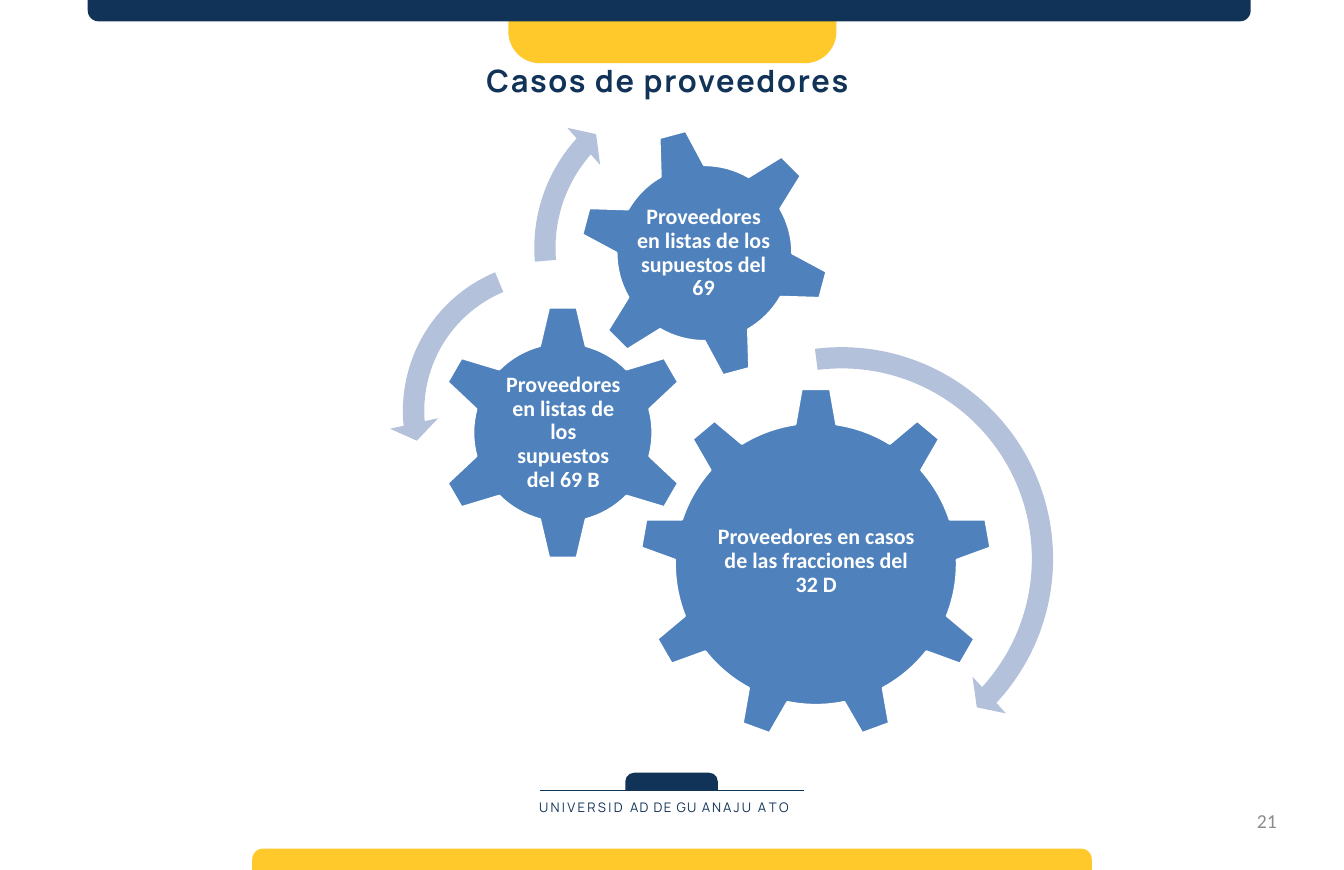
"""Build the supplier cases slide with three gears and turning arrows."""
import pptx
import pptx.dml.color
import pptx.enum.shapes
import pptx.enum.text
import pptx.oxml.ns
import pptx.util
from lxml import etree
from pptx.util import Inches

NAVY, YELLOW, BLUE, PALE = "123358", "FFC82B", "4F81BD", "B3C1DB"
WHITE, GRAY = "FFFFFF", "8C8C8C"
SHAPE = pptx.enum.shapes.MSO_SHAPE
ALIGN = pptx.enum.text.PP_ALIGN
ANCHOR = pptx.enum.text.MSO_ANCHOR

TABS = [
    (7.91, 9.77, 1.17, 0.22, NAVY, True),
    (6.43, 0, 4.15, 0.8, YELLOW, False),
    (1.11, 0, 14.71, 0.27, NAVY, False),
    (3.19, 10.73, 10.62, 0.27, YELLOW, True),
]
GEARS = [
    (SHAPE.GEAR_9, 8.09, 4.9, 4.46, 0, (8.99, 5.95, 2.67, 2.29),
     "Proveedores en casos de las fracciones del 32 D"),
    (SHAPE.GEAR_6, 5.5, 3.85, 3.24, 0, (6.32, 4.67, 1.61, 1.6),
     "Proveedores en listas de los supuestos del 69 B"),
    (SHAPE.GEAR_6, 7.32, 1.61, 3.18, 345, (8.01, 2.31, 1.78, 1.78),
     "Proveedores en listas de los supuestos del 69"),
]
ARROWS = [
    (SHAPE.CIRCULAR_ARROW, 7.79, 4.21, 5.71, (0.047, 2.99, 25.618, 157.662, 0.055)),
    (SHAPE.LEFT_CIRCULAR_ARROW, 4.92, 3.12, 4.15, (0.065, 4.3, 104.891, 148.378, 0.075)),
    (SHAPE.CIRCULAR_ARROW, 6.58, 0.9, 4.47, (0.06, 3.941, 133.138, 105.082, 0.07)),
]
UNIVERSITY = [("UNIVERSID ", 2.1), ("AD DE GU ", 1.2), ("ANAJU ", 1.9),
              ("A T ", 0), ("O", -0.5)]


def rgb(color):
    """Return the colour for a hex string."""
    return pptx.dml.color.RGBColor.from_string(color)


def format_run(r, size, font, color, bold=False, spacing=0):
    """Set the font and letter spacing of a run."""
    r.font.size = pptx.util.Pt(size)
    r.font.name = font
    r.font.bold = bold
    r.font.color.rgb = rgb(color)
    if spacing:
        r._r.get_or_add_rPr().set("spc", str(round(spacing * 100)))


def format_frame(tf, anchor=ANCHOR.TOP, inset=0):
    """Set wrapping, anchor and equal insets of a text frame."""
    tf.word_wrap = True
    tf.auto_size = pptx.enum.text.MSO_AUTO_SIZE.NONE
    tf.vertical_anchor = anchor
    tf.margin_left = tf.margin_right = Inches(inset)
    tf.margin_top = tf.margin_bottom = Inches(inset)


def add_text(s, box, align, anchor=ANCHOR.TOP, inset=0):
    """Add a text box and return its first paragraph."""
    tf = s.shapes.add_textbox(*map(Inches, box)).text_frame
    format_frame(tf, anchor, inset)
    tf.paragraphs[0].alignment = align
    return tf.paragraphs[0]


def add_shape(s, kind, box, fill, adjustments=()):
    """Add a flat shape without outline."""
    sp = s.shapes.add_shape(kind, *map(Inches, box))
    sp.shadow.inherit = False
    sp.fill.solid()
    sp.fill.fore_color.rgb = rgb(fill)
    sp.line.fill.background()
    for i, value in enumerate(adjustments):
        sp.adjustments[i] = value
    return sp


def add_tab(s, x, y, w, h, color, round_top):
    """Add an edge tab rounded at its top or its bottom."""
    radii = (0.5, 0) if round_top else (0, 0.5)
    add_shape(s, SHAPE.ROUND_2_SAME_RECTANGLE, (x, y, w, h), color, radii)


def add_gear(s, kind, x, y, size, rotation, label_box, label):
    """Add a gear and its upright label."""
    sp = add_shape(s, kind, (x, y, size, size), BLUE)
    sp.rotation = rotation
    sp.line.color.rgb = rgb(WHITE)
    sp.line.width = pptx.util.Pt(2)
    p = add_text(s, label_box, ALIGN.CENTER, ANCHOR.MIDDLE, 0.03)
    p.line_spacing = 0.9
    p.text = label
    format_run(p.runs[0], 20, "Calibri", WHITE, bold=True)


def add_title(s, text):
    """Fill and place the title placeholder."""
    sp = s.shapes.title
    sp.left, sp.top, sp.width, sp.height = map(Inches, (3.11, 0.78, 10.67, 0.49))
    tf = sp.text_frame
    tf.text = text
    format_frame(tf)
    p = tf.paragraphs[0]
    p.alignment = ALIGN.CENTER
    format_run(p.runs[0], 28, "Manrope", NAVY, bold=True, spacing=1.6)


def add_rule(s, x1, x2, y):
    """Add the thin horizontal line above the university name."""
    line = s.shapes.add_connector(
        pptx.enum.shapes.MSO_CONNECTOR.STRAIGHT,
        Inches(x1), Inches(y), Inches(x2), Inches(y))
    line.line.color.rgb = rgb(NAVY)
    line.line.width = pptx.util.Pt(0.5)
    etree.SubElement(line._element.spPr, pptx.oxml.ns.qn("a:effectLst"))


def add_footer(s):
    """Add the university name and the page number."""
    add_rule(s, 6.83, 10.17, 9.99)
    p = add_text(s, (6.82, 10.11, 4.18, 0.21), ALIGN.LEFT)
    for text, spacing in UNIVERSITY:
        r = p.add_run()
        r.text = text
        format_run(r, 12, "Manrope", NAVY, spacing=spacing)
    p = add_text(s, (12.24, 10.23, 3.91, 0.55), ALIGN.RIGHT)
    p.text = "21"
    format_run(p.runs[0], 18, "Calibri", GRAY)


def main():
    """Build and save the slide."""
    prs = pptx.Presentation()
    prs.slide_width, prs.slide_height = Inches(17), Inches(11)
    s = prs.slides.add_slide(prs.slide_layouts[5])
    for tab in TABS:
        add_tab(s, *tab)
    add_title(s, "Casos de proveedores")
    add_footer(s)
    for gear in GEARS:
        add_gear(s, *gear)
    for kind, x, y, size, adjustments in ARROWS:
        add_shape(s, kind, (x, y, size, size), PALE, adjustments)
    prs.save("out.pptx")


if __name__ == "__main__":
    main()
